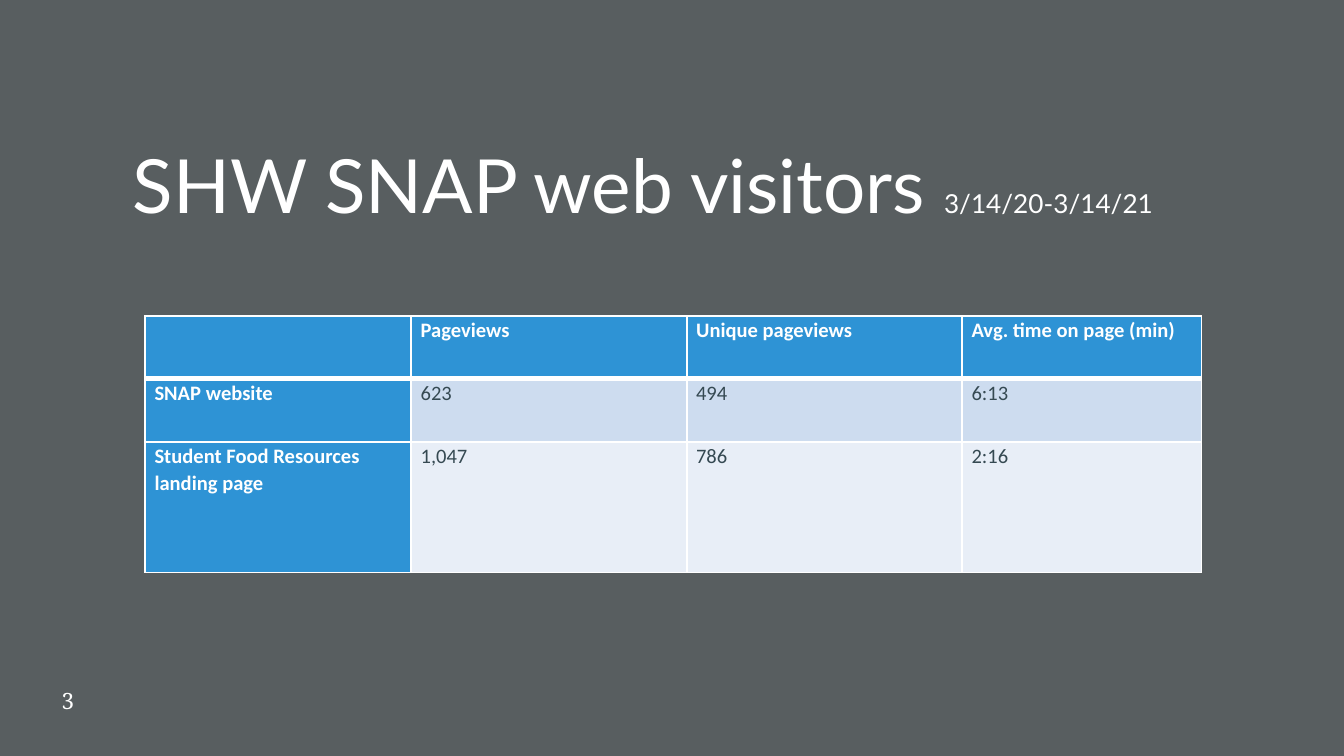
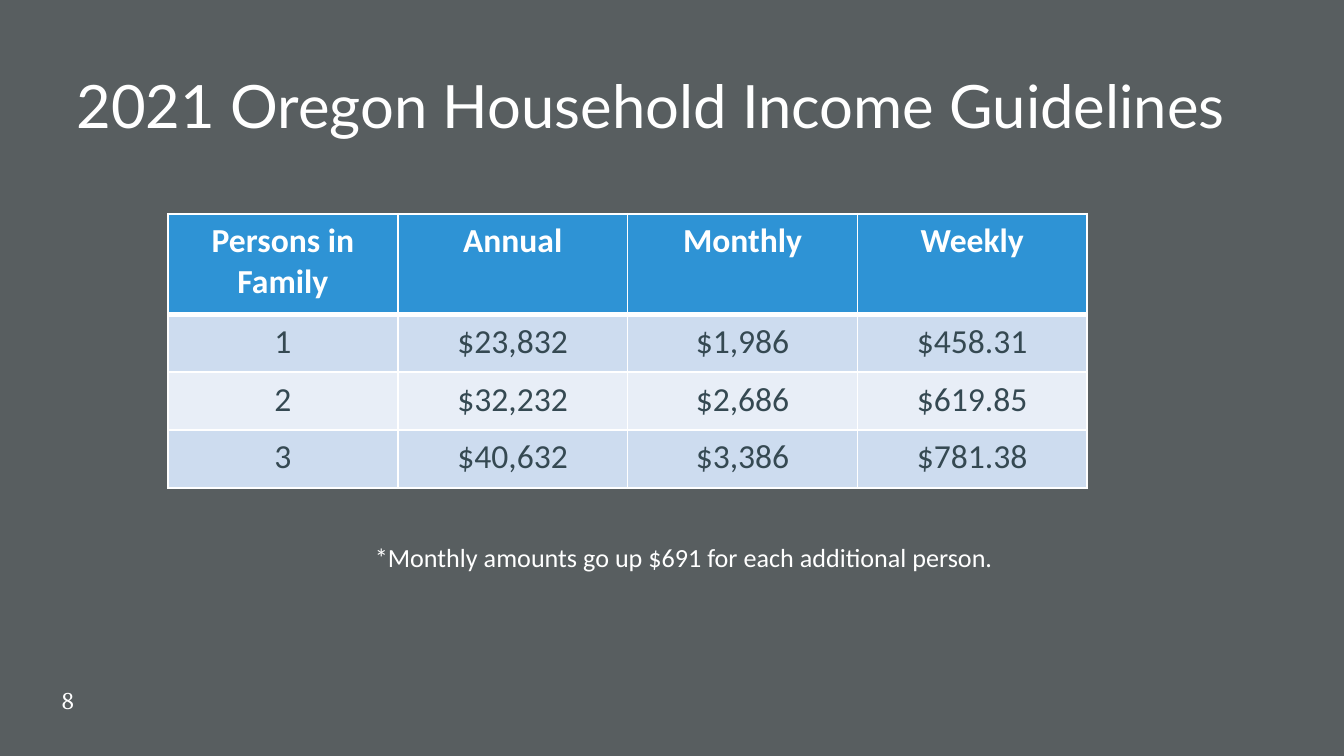
import pptx
import pptx.dml.color
import pptx.enum.shapes
import pptx.enum.text
import pptx.util
from lxml import etree

Inches = pptx.util.Inches
Pt = pptx.util.Pt
Align = pptx.enum.text.PP_ALIGN
Anchor = pptx.enum.text.MSO_ANCHOR

# Shared look
GRAY, BLUE, WHITE, INK = "585E60", "2E93D5", "FFFFFF", "354952"
BANDS = ("CDDCEF", "E8EEF7")
THIN, THICK = 1, 3
WIDTH = Inches(10)
HEIGHT = WIDTH * 9 // 16

BODY = {"name": "Calibri", "bold": False}
TITLE = {"name": "Lato"}
NUMBER = {"name": "Noto Serif", "size": Pt(12)}

# Table text formats
SMALL = {
    "size": Pt(11),
    "para": {"line_spacing": 1.07},
    "cell": {"margin_left": Inches(0.07), "margin_right": Inches(0.07),
             "margin_top": 0, "margin_bottom": 0},
}
LARGE = {"size": Pt(18), "para": {"alignment": Align.CENTER}, "cell": {}}


def color(code):
    return pptx.dml.color.RGBColor.from_string(code)


def apply(item, values):
    for name, value in values.items():
        setattr(item, name, value)


def paint(fill, code):
    fill.solid()
    fill.fore_color.rgb = color(code)


def add_run(para, text, style, code=WHITE):
    run = para.add_run()
    run.text = text
    apply(run.font, style)
    run.font.color.rgb = color(code)


def add_text(slide, area, runs, **frame):
    box = slide.shapes.add_textbox(*map(Inches, area))
    apply(box.text_frame, {"word_wrap": True, **frame})
    for text, style in runs:
        add_run(box.text_frame.paragraphs[0], text, style)


def add_title(slide, area, *parts):
    runs = [(text, {**TITLE, "size": Pt(size)}) for text, size in parts]
    add_text(slide, area, runs, vertical_anchor=Anchor.MIDDLE)


def new_slide(deck, number):
    slide = deck.slides.add_slide(deck.slide_layouts[6])
    panel = slide.shapes.add_shape(
        pptx.enum.shapes.MSO_SHAPE.RECTANGLE, 0, 0, WIDTH, HEIGHT)
    panel.shadow.inherit = False
    paint(panel.fill, GRAY)
    panel.line.fill.background()
    add_text(slide, (0.36, 5.01, 0.65, 0.4), [(number, NUMBER)],
             vertical_anchor=Anchor.MIDDLE)
    return slide


def add_edges(cell, top, bottom):
    props = cell._tc.get_or_add_tcPr()
    tag = pptx.oxml.ns.qn
    sides = {"lnL": THIN, "lnR": THIN, "lnT": top, "lnB": bottom}
    for side, width in sides.items():
        line = etree.SubElement(props, tag("a:" + side), w=str(Pt(width)))
        solid = etree.SubElement(line, tag("a:solidFill"))
        etree.SubElement(solid, tag("a:srgbClr"), val=WHITE)


def add_table(slide, left, top, cols, rows, data, style, side_head=False):
    frame = slide.shapes.add_table(
        len(rows), len(cols), Inches(left), Inches(top),
        Inches(sum(cols)), Inches(sum(rows)))
    table = frame.table
    table.first_col = side_head
    for col, width in zip(table.columns, cols):
        col.width = Inches(width)
    for row, height in zip(table.rows, rows):
        row.height = Inches(height)

    for i, line in enumerate(data):
        for j, text in enumerate(line):
            cell = table.cell(i, j)
            head = i == 0 or (side_head and j == 0)
            add_edges(cell, THICK if i == 1 else THIN,
                      THICK if i == 0 else THIN)
            paint(cell.fill, BLUE if head else BANDS[(i - 1) % 2])
            apply(cell, style["cell"])
            para = cell.text_frame.paragraphs[0]
            apply(para, style["para"])
            if text:
                font = {**BODY, "size": style["size"], "bold": head}
                add_run(para, text, font, WHITE if head else INK)


def add_visits(deck):
    slide = new_slide(deck, "3")
    add_title(slide, (0.89, 0.9, 8.24, 0.94),
              ("SHW SNAP web visitors ", 40), ("3/14/20-3/14/21", 14))
    data = [
        ("", "Pageviews", "Unique pageviews", "Avg. time on page (min)"),
        ("SNAP website", "623", "494", "6:13"),
        ("Student Food Resources landing page", "1,047", "786", "2:16"),
    ]
    add_table(slide, 1.08, 2.35, (1.98, 2.05, 2.05, 1.78),
              (0.47, 0.47, 0.97), data, SMALL, side_head=True)


def add_income(deck):
    slide = new_slide(deck, "8")
    add_title(slide, (0.47, 0.31, 8.91, 0.94),
              ("2021 Oregon Household Income Guidelines", 32))
    data = [
        ("Persons in Family", "Annual", "Monthly", "Weekly"),
        ("1", "$23,832", "$1,986", "$458.31"),
        ("2", "$32,232", "$2,686", "$619.85"),
        ("3", "$40,632", "$3,386", "$781.38"),
    ]
    add_table(slide, 1.25, 1.59, [1.71] * 4, [0.75] + [0.43] * 3, data, LARGE)
    note = "*Monthly amounts go up $691 for each additional person."
    add_text(slide, (2.69, 3.98, 4.85, 0.34),
             [(note, {**BODY, "size": Pt(14)})], word_wrap=False,
             auto_size=pptx.enum.text.MSO_AUTO_SIZE.SHAPE_TO_FIT_TEXT)


def main():
    deck = pptx.Presentation()
    apply(deck, {"slide_width": WIDTH, "slide_height": HEIGHT})
    add_visits(deck)
    add_income(deck)
    deck.save("out.pptx")


if __name__ == "__main__":
    main()
